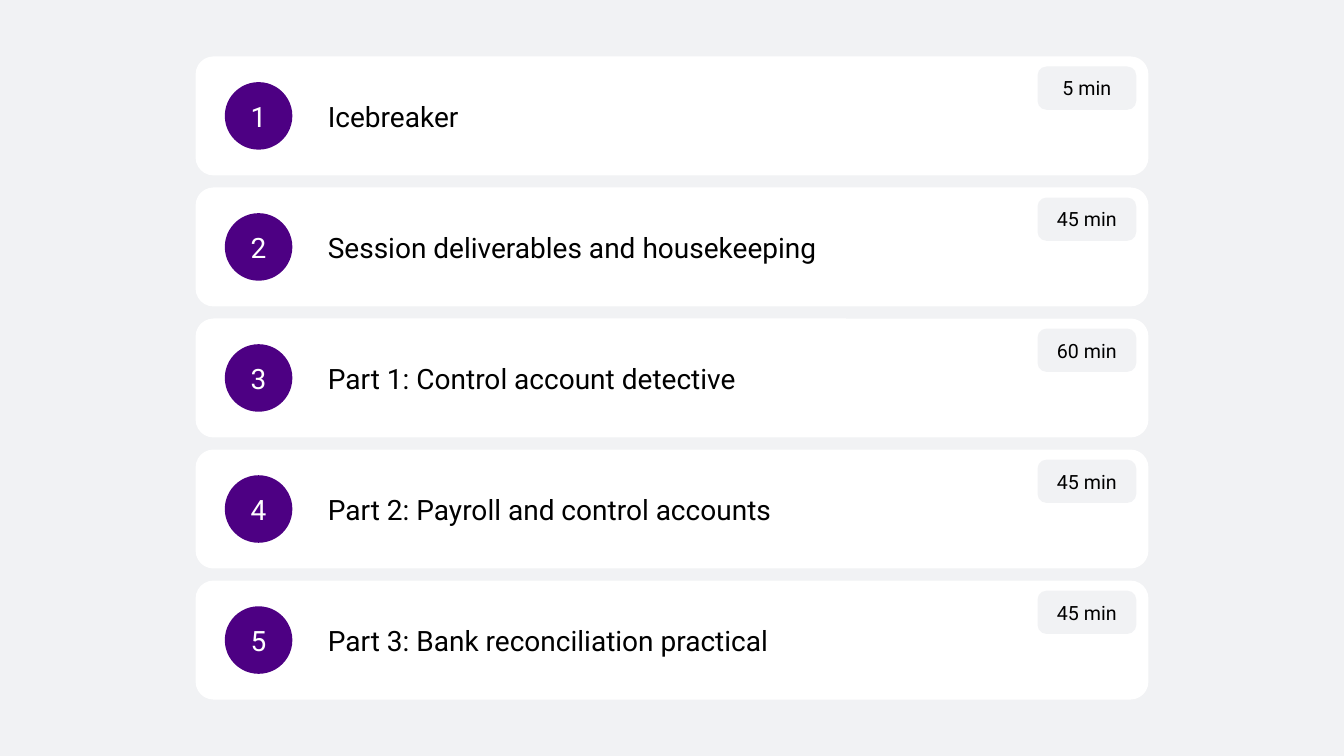
"""Build an agenda slide of numbered session cards with durations."""
from pptx import Presentation
from pptx.dml.color import RGBColor
from pptx.enum.shapes import MSO_SHAPE
from pptx.enum.text import MSO_ANCHOR, PP_ALIGN
from pptx.util import Inches, Pt

ROUNDED, OVAL = MSO_SHAPE.ROUNDED_RECTANGLE, MSO_SHAPE.OVAL
LEFT, CENTER = PP_ALIGN.LEFT, PP_ALIGN.CENTER
MIDDLE = MSO_ANCHOR.MIDDLE

FONT = "Roboto"
GREY, WHITE, BLACK, PURPLE = "F1F2F4", "FFFFFF", "000000", "4D0083"

CARD_LEFT, CARD_TOP = 1.94, 0.56
CARD_WIDTH, CARD_HEIGHT = 9.45, 1.18
ROW_STEP = 1.3
TITLE_INDENT = 1.26
BADGE_INSET, BADGE_SIZE = 0.29, 0.67
TAG_INSET, TAG_DROP = 0.12, 0.1
TAG_WIDTH, TAG_HEIGHT = 0.98, 0.43

AGENDA = [
    ("Icebreaker", "5 min"),
    ("Session deliverables and housekeeping", "45 min"),
    ("Part 1: Control account detective", "60 min"),
    ("Part 2: Payroll and control accounts", "45 min"),
    ("Part 3: Bank reconciliation practical", "45 min"),
]


def set_fill(fill, color):
    """Make a fill solid in a hex colour."""
    fill.solid()
    fill.fore_color.rgb = RGBColor.from_string(color)


def add_label(s, kind, box, fill, text, size, color=BLACK, align=CENTER,
              indent=0, radius=None):
    """Add a borderless filled shape with one line of text."""
    sp = s.shapes.add_shape(kind, *map(Inches, box))
    sp.shadow.inherit = False
    set_fill(sp.fill, fill)
    sp.line.fill.background()
    if radius is not None:
        sp.adjustments[0] = radius
    tf = sp.text_frame
    tf.word_wrap = True
    tf.vertical_anchor = MIDDLE
    tf.margin_left = tf.margin_right = Inches(indent)
    tf.margin_top = tf.margin_bottom = 0
    p = tf.paragraphs[0]
    p.text = text
    p.alignment = align
    p.font.name = FONT
    p.font.size = Pt(size)
    set_fill(p.font.fill, color)


def add_agenda_row(s, index, title, duration):
    """Add one card with its title, duration tag and number badge."""
    top = CARD_TOP + index * ROW_STEP
    tag_left = CARD_LEFT + CARD_WIDTH - TAG_INSET - TAG_WIDTH
    badge_top = top + (CARD_HEIGHT - BADGE_SIZE) / 2
    add_label(s, ROUNDED, (CARD_LEFT, top, CARD_WIDTH, CARD_HEIGHT), WHITE,
              title, 20, align=LEFT, indent=TITLE_INDENT, radius=0.15)
    add_label(s, ROUNDED, (tag_left, top + TAG_DROP, TAG_WIDTH, TAG_HEIGHT),
              GREY, duration, 14, radius=0.21)
    add_label(s, OVAL,
              (CARD_LEFT + BADGE_INSET, badge_top, BADGE_SIZE, BADGE_SIZE),
              PURPLE, str(index + 1), 20, color=WHITE)


def main():
    """Build and save the slide."""
    prs = Presentation()
    prs.slide_width, prs.slide_height = Inches(13.33), Inches(7.5)
    s = prs.slides.add_slide(prs.slide_layouts[6])
    set_fill(s.background.fill, GREY)
    for index, (title, duration) in enumerate(AGENDA):
        add_agenda_row(s, index, title, duration)
    prs.save("out.pptx")


if __name__ == "__main__":
    main()
